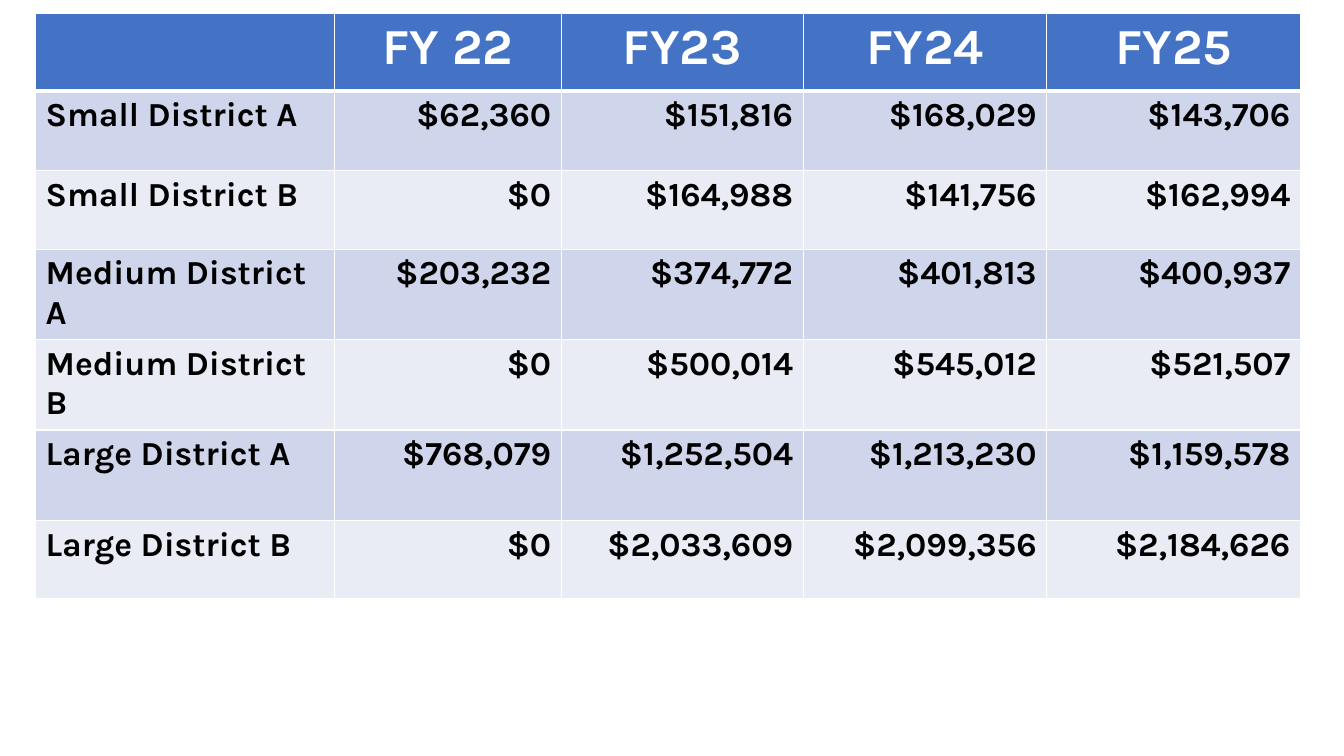
from lxml import etree
from pptx import Presentation
from pptx.dml.color import RGBColor
from pptx.enum import text
from pptx.oxml import ns
from pptx.util import Pt

# Content
HEADINGS = ["", "FY 22", "FY23", "FY24", "FY25"]
DISTRICTS = [
    ("Small District A", 62360, 151816, 168029, 143706),
    ("Small District B", 0, 164988, 141756, 162994),
    ("Medium District A", 203232, 374772, 401813, 400937),
    ("Medium District B", 0, 500014, 545012, 521507),
    ("Large District A", 768079, 1252504, 1213230, 1159578),
    ("Large District B", 0, 2033609, 2099356, 2184626),
]

# Theme and layout, in points
THEME = {
    "font": "Karla", "heading_size": 36, "body_size": 24,
    "heading_fill": "4472C4", "bands": ("CFD5EA", "E9EBF5"),
    "heading_text": "FFFFFF", "body_text": "000000", "border": "FFFFFF",
}
LEFT, TOP = 25.4, 9.7
COLUMN_WIDTHS = [213.5, 162, 172.8, 174, 181.2]
ROW_HEIGHTS = [55.2, 56.9, 56.2, 64.6, 64.6, 64.6, 55.6]
THIN, THICK = 1, 3


def set_borders(cell, top, bottom):
    properties = cell._tc.get_or_add_tcPr()
    for side, width in (("L", THIN), ("R", THIN), ("T", top), ("B", bottom)):
        line = etree.SubElement(properties, ns.qn(f"a:ln{side}"), w=str(Pt(width)))
        fill = etree.SubElement(line, ns.qn("a:solidFill"))
        etree.SubElement(fill, ns.qn("a:srgbClr"), val=THEME["border"])


def style_cell(cell, wording, fill, color, size, alignment):
    cell.fill.solid()
    cell.fill.fore_color.rgb = RGBColor.from_string(fill)
    cell.text = wording
    paragraph = cell.text_frame.paragraphs[0]
    paragraph.alignment = alignment
    paragraph.font.name = THEME["font"]
    paragraph.font.size = Pt(size)
    paragraph.font.bold = True
    paragraph.font.color.rgb = RGBColor.from_string(color)


presentation = Presentation()
presentation.slide_width, presentation.slide_height = Pt(960), Pt(540)
slide = presentation.slides.add_slide(presentation.slide_layouts[6])

# Table grid
table = slide.shapes.add_table(
    len(ROW_HEIGHTS), len(COLUMN_WIDTHS), Pt(LEFT), Pt(TOP),
    Pt(sum(COLUMN_WIDTHS)), Pt(sum(ROW_HEIGHTS))).table
for column, width in zip(table.columns, COLUMN_WIDTHS):
    column.width = Pt(width)
for row, height in zip(table.rows, ROW_HEIGHTS):
    row.height = Pt(height)

# Heading row
for cell, heading in zip(table.rows[0].cells, HEADINGS):
    set_borders(cell, THIN, THICK)
    style_cell(cell, heading, THEME["heading_fill"], THEME["heading_text"],
               THEME["heading_size"], text.PP_ALIGN.CENTER)

# District rows
for index, (district, *amounts) in enumerate(DISTRICTS):
    wordings = [district] + [f"${amount:,}" for amount in amounts]
    for column, wording in enumerate(wordings):
        cell = table.cell(index + 1, column)
        set_borders(cell, THIN if index else THICK, THIN)
        style_cell(cell, wording, THEME["bands"][index % 2], THEME["body_text"],
                   THEME["body_size"],
                   text.PP_ALIGN.RIGHT if column else text.PP_ALIGN.LEFT)

presentation.save("out.pptx")
